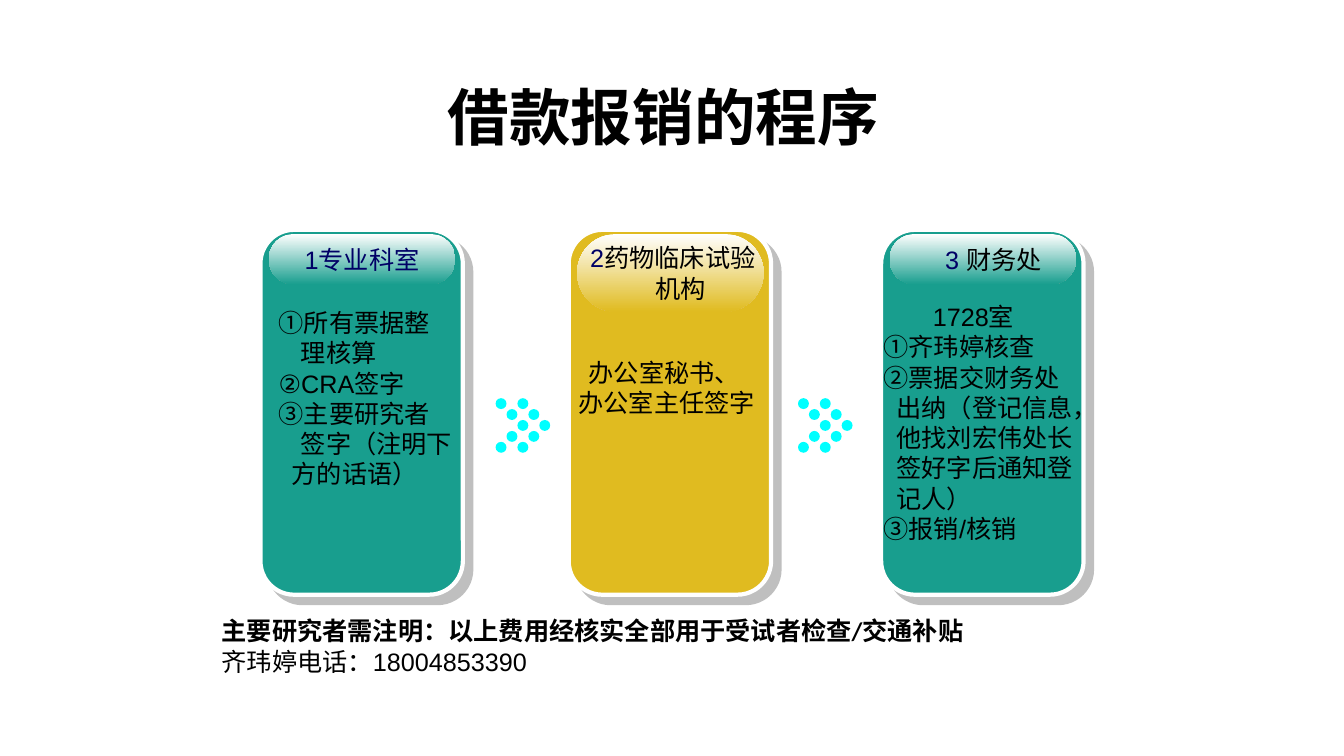
import pptx
import pptx.util
import pptx.dml.color
import pptx.enum.shapes
import pptx.enum.text
import pptx.oxml
import pptx.oxml.ns

RGB = pptx.dml.color.RGBColor
KIND = pptx.enum.shapes.MSO_SHAPE
ALIGN = pptx.enum.text.PP_ALIGN
MID = pptx.enum.text.MSO_ANCHOR.MIDDLE
Pt = pptx.util.Pt

TEAL = RGB(0x18, 0x9E, 0x8E)
GOLD = RGB(0xE0, 0xBB, 0x20)
CYAN = RGB(0x00, 0xFF, 0xFF)
NAVY = RGB(0x00, 0x00, 0x66)
WHITE = RGB(0xFF, 0xFF, 0xFF)
BLACK = RGB(0x00, 0x00, 0x00)

WIDE, HIGH = pptx.util.Inches(13.333), pptx.util.Inches(7.5)
COLS, ROWS = 160, 90
HANG = 0.13
BASE = {"size": Pt(18), "name": "Arial", "bold": False}

SHADOW = (
    '<a:outerShdw %s blurRad="0" dist="107950" dir="2700000" algn="ctr" rotWithShape="0">'
    '<a:srgbClr val="808080"><a:alpha val="50000"/></a:srgbClr></a:outerShdw>'
    % pptx.oxml.ns.nsdecls("a"))


def grid(x, y, w, h):
    """Turn columns and rows into slide lengths."""
    cell = WIDE / COLS, HIGH / ROWS
    return [round(n * cell[i % 2]) for i, n in enumerate((x, y, w, h))]


def put(obj, values):
    for key, val in values.items():
        setattr(obj, key, val)


def shape(home, kind, area, fill=None):
    item = home.shapes.add_shape(kind, *grid(*area))
    item.shadow.inherit = False
    item.line.fill.background()
    if fill is not None:
        item.fill.solid()
        item.fill.fore_color.rgb = fill
    return item


def write(para, runs, form=None):
    """Add (text, colour, extra font values) runs to a paragraph."""
    put(para, form or {})
    for text, tint, extra in runs:
        run = para.add_run()
        run.text = text
        put(run.font, {**BASE, **extra})
        run.font.color.rgb = tint


def indent(para, left, first=0):
    """Set the left margin and the first line's offset from it, in inches."""
    props = para._p.get_or_add_pPr()
    props.set("marL", str(pptx.util.Inches(left)))
    props.set("indent", str(pptx.util.Inches(first)))


def paras(frame, count):
    return [frame.paragraphs[0]] + [frame.add_paragraph() for _ in range(count - 1)]


def box(slide, area, count):
    """Add a wrapping text box and return its frame and paragraphs."""
    frame = slide.shapes.add_textbox(*grid(*area)).text_frame
    frame.word_wrap = True
    return frame, paras(frame, count)


def card(slide, x, tint, cap, lines):
    """Draw a shadowed card with a glossy heading; lines are (runs, left margin)."""
    group = slide.shapes.add_group_shape()
    body = shape(group, KIND.ROUNDED_RECTANGLE, (x, 27.36, 24.1, 43.44), tint)
    body.line.color.rgb = WHITE
    body.line.width = Pt(3)
    glow = body._element.spPr.find(pptx.oxml.ns.qn("a:effectLst"))
    glow.append(pptx.oxml.parse_xml(SHADOW))

    head = shape(group, KIND.ROUNDED_RECTANGLE, (x + 1, 27.87, 22.2, cap))
    head.adjustments[0] = 0.5
    head.fill.gradient()
    head.fill.gradient_angle = 270
    for stop, tone, at in zip(head.fill.gradient_stops, (WHITE, tint), (0, 1)):
        stop.color.rgb = tone
        stop.position = at
    frame = head.text_frame
    put(frame, {"word_wrap": False, "vertical_anchor": MID})
    for para, (runs, left) in zip(paras(frame, len(lines)), lines):
        write(para, runs, {"alignment": ALIGN.CENTER})
        indent(para, left)


def steps(slide, area, lines):
    """Write lines of (text, start of the first line in inches)."""
    for para, (text, start) in zip(box(slide, area, len(lines))[1], lines):
        write(para, [(text, BLACK, {})])
        indent(para, HANG, start - HANG)


def arrow(slide, x, y=47.4, dot=1.3):
    """Draw two chevrons of five dots each."""
    group = slide.shapes.add_group_shape()
    for back in (2, 0):
        for row in range(5):
            col = back + 2 - abs(row - 2)
            shape(group, KIND.OVAL, (x + col * dot, y + row * dot, dot, dot), CYAN)


def main():
    deck = pptx.Presentation()
    put(deck, {"slide_width": WIDE, "slide_height": HIGH})
    slide = deck.slides.add_slide(deck.slide_layouts[6])

    card(slide, 31, TEAL, 6, [
        ([("1", NAVY, {}), ("专业科室", NAVY, {"name": "Noto Sans CJK SC"})], 0)])
    card(slide, 67.7, GOLD, 9.24, [
        ([("2", NAVY, {}), ("药物临床试验", BLACK, {})], 0.05),
        ([("机构", BLACK, {})], 0.21)])
    card(slide, 104.9, TEAL, 6, [
        ([("3 ", NAVY, {}), ("财务处", BLACK, {})], 0.21)])

    steps(slide, (32, 36, 24, 26.6), [
        ("①所有票据整", 0), ("理核算", 0.22), ("②CRA签字", 0),
        ("③主要研究者", 0), ("签字（注明下方的话语）", 0.22)])
    steps(slide, (67.7, 41.9, 26.6, 8.5), [
        ("办公室秘书、", 0.1), ("办公室主任签字", 0)])
    steps(slide, (104, 35.3, 26.2, 30), [
        ("1728室", 0.49), ("①齐玮婷核查", 0),
        ("②票据交财务处出纳（登记信息，他找刘宏伟处长签好字后通知登记人）", 0),
        ("③报销/核销", 0)])

    for x in (59, 95):
        arrow(slide, x)

    frame, (title,) = box(slide, (25, 5, 108, 15), 1)
    frame.vertical_anchor = MID
    write(title, [("借款报销的程序", BLACK, {"size": Pt(44), "bold": True})],
          {"alignment": ALIGN.CENTER, "line_spacing": 1.3})

    note, phone = box(slide, (25.2, 72.7, 109, 8.5), 2)[1]
    write(note, [("主要研究者需注明：以上费用经核实全部用于受试者检查/交通补贴",
                  BLACK, {"name": "Calibri", "bold": True})])
    write(phone, [("齐玮婷电话：18004853390", BLACK, {})])

    deck.save("out.pptx")


if __name__ == "__main__":
    main()
